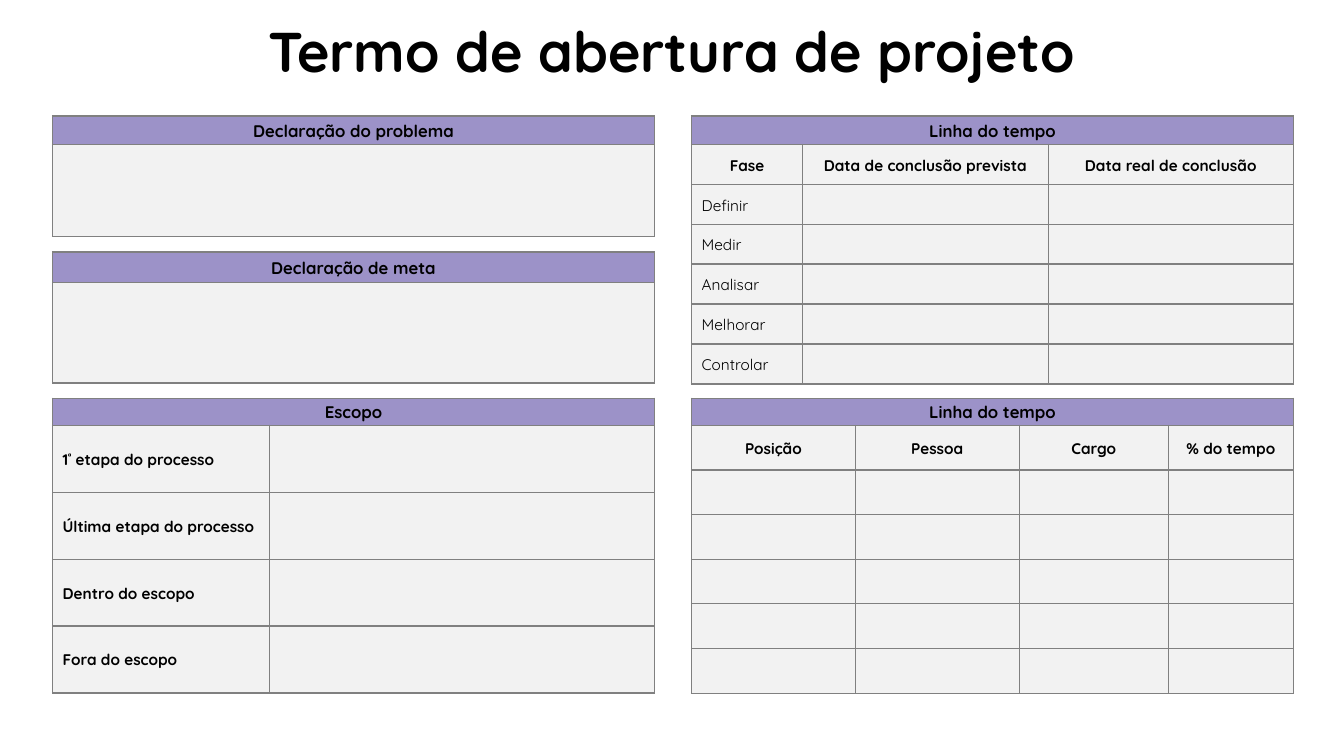
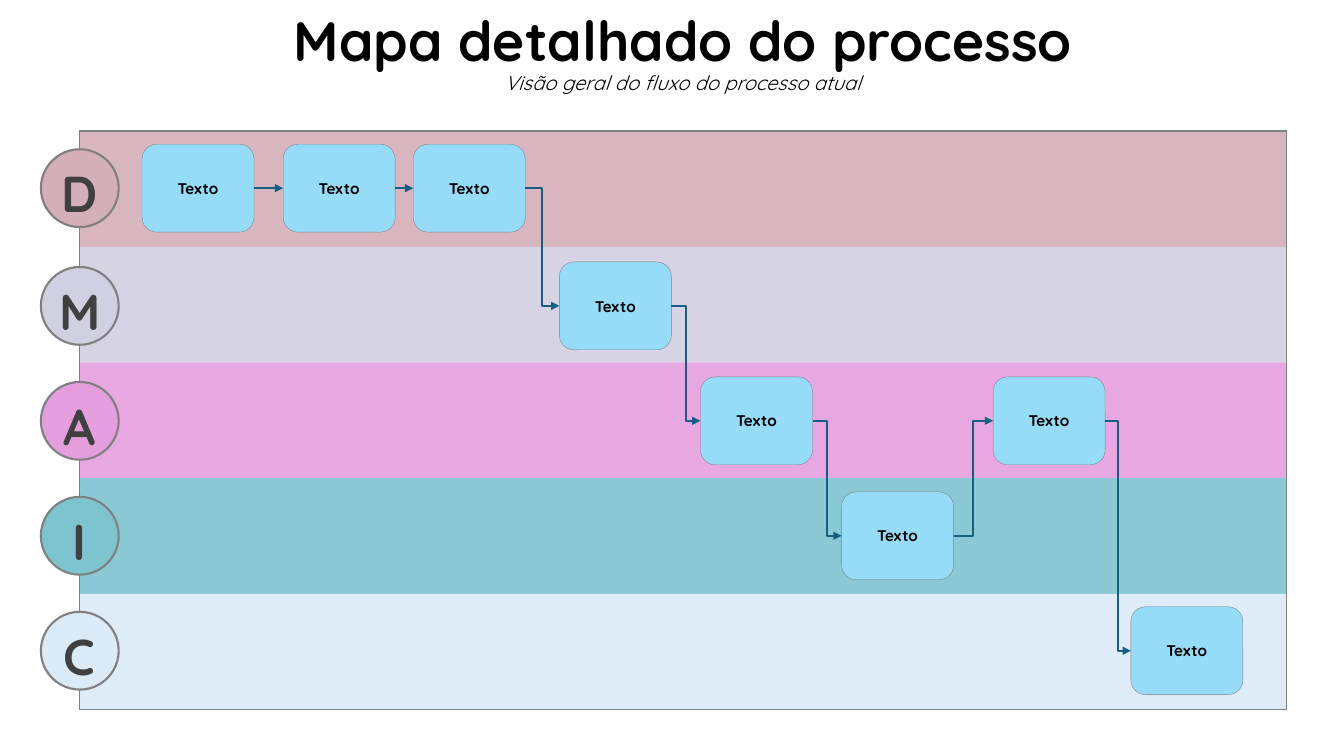
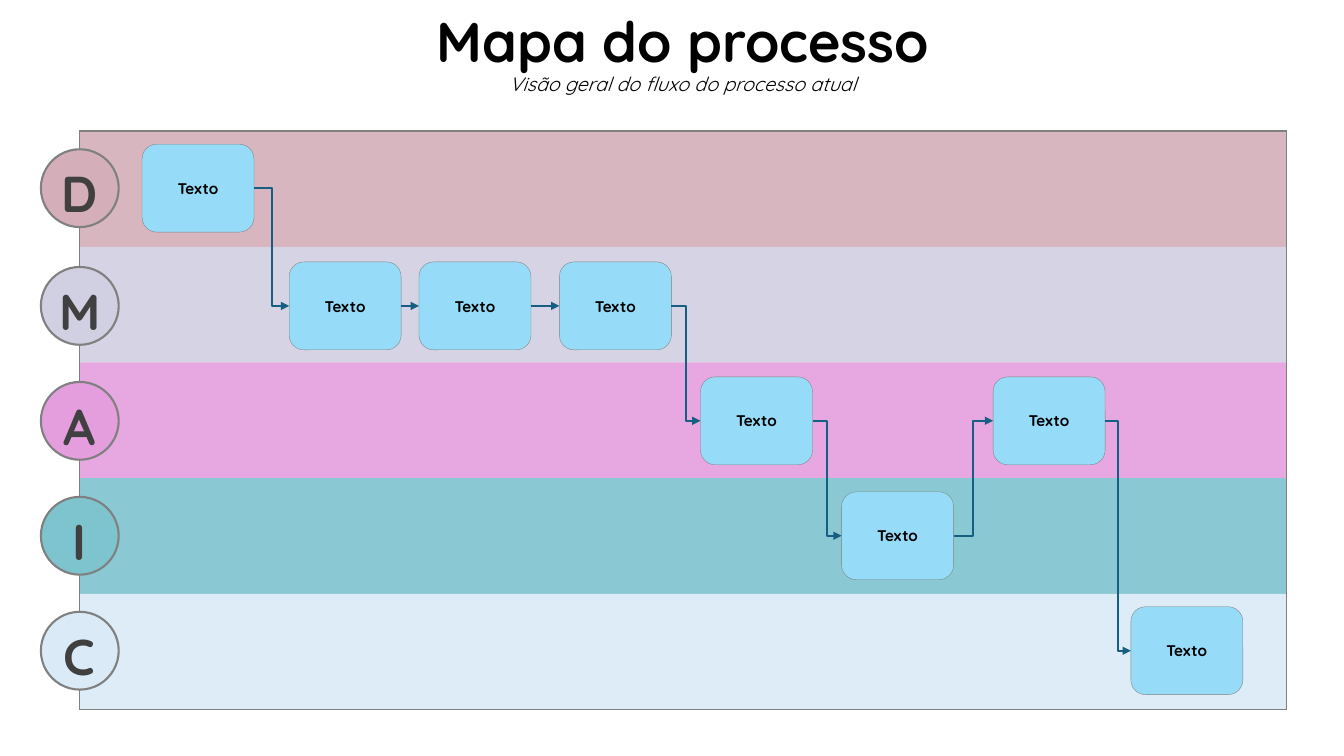
from itertools import pairwise

from pptx import Presentation
from pptx.dml.color import RGBColor
from pptx.enum.shapes import MSO_CONNECTOR, MSO_SHAPE
from pptx.enum.text import MSO_ANCHOR, PP_ALIGN
from pptx.oxml.ns import qn
from pptx.oxml.xmlchemy import OxmlElement
from pptx.util import Pt

FONT = "Quicksand"
BLACK, DARK, GRAY = "000000", "404040", "808080"
HEADER, BODY, CARD, ARROW = "9C92C8", "F2F2F2", "96DCF8", "156082"
PLAIN_TABLE = "{2D5ABB26-0587-4C30-8999-92F81FD0307C}"
LEFT, RIGHT, PANEL_WIDTH = 37.5, 494, 430
LANE_LEFT, LANE_TOP, LANE_WIDTH, LANE_HEIGHT = 57, 93.6, 861.8, 82.66
CARD_WIDTH, CARD_HEIGHT, BADGE = 80, 62.8, 55.6
LANES = {
    "D": ("D4AFB9", 134.4),
    "M": ("D1CFE2", 218.5),
    "A": ("E59EDD", 300.6),
    "I": ("7EC4CF", 382.7),
    "C": ("DAEAF6", 464.8),
}
SUBTITLE = "Visão geral do fluxo do processo atual"
SHARED_STEPS = [("M", 399.6), ("A", 500.4), ("I", 601.2), ("A", 709.4), ("C", 807.8)]


def rgb(value):
    return RGBColor.from_string(value)


def add_element(parent, tag, **attributes):
    element = OxmlElement(tag)
    for name, value in attributes.items():
        element.set(name, str(value))
    parent.append(element)
    return element


def add_text(paragraph, text, *, size=11, color=BLACK, bold=True, italic=False,
             align=PP_ALIGN.CENTER, spacing=1.07, superscript=False):
    paragraph.alignment = align
    paragraph.line_spacing = spacing
    run = paragraph.add_run()
    run.text = text
    font = run.font
    font.name, font.size, font.bold, font.italic = FONT, Pt(size), bold, italic
    font.color.rgb = rgb(color)
    if superscript:
        run._r.get_or_add_rPr().set("baseline", "30000")


def set_margins(item, horizontal, vertical):
    item.margin_left = item.margin_right = Pt(horizontal)
    item.margin_top = item.margin_bottom = Pt(vertical)


def style_cell(cell, fill, sides="LRTB", alpha=None):
    properties = cell._tc.get_or_add_tcPr()
    for side in sides:
        line = add_element(properties, f"a:ln{side}", w=Pt(1))
        add_element(add_element(line, "a:solidFill"), "a:srgbClr", val=GRAY)
    cell.fill.solid()
    cell.fill.fore_color.rgb = rgb(fill)
    if alpha:
        add_element(properties.find(qn("a:solidFill"))[0], "a:alpha", val=alpha * 1000)
    cell.vertical_anchor = MSO_ANCHOR.MIDDLE
    add_element(cell.text_frame.paragraphs[0]._p, "a:endParaRPr", sz=1100)


class Deck:
    def __init__(self):
        self.presentation = Presentation()
        self.presentation.slide_width = Pt(960)
        self.presentation.slide_height = Pt(540)
        self.slide = None

    def new_slide(self, title, left, width, size=40, subtitle=None, subtitle_size=14):
        self.slide = self.presentation.slides.add_slide(self.presentation.slide_layouts[6])
        frame = self.slide.shapes.add_textbox(Pt(left), Pt(0), Pt(width), Pt(77.8)).text_frame
        frame.word_wrap = True
        frame.vertical_anchor = MSO_ANCHOR.MIDDLE
        paragraph = frame.paragraphs[0]
        add_text(paragraph, title, size=size, spacing=0.9)
        if subtitle:
            paragraph.add_line_break()
            add_text(paragraph, subtitle, size=subtitle_size, bold=False, italic=True, spacing=0.9)

    def table(self, left, top, widths, heights):
        frame = self.slide.shapes.add_table(len(heights), len(widths), Pt(left), Pt(top),
                                            Pt(sum(widths)), Pt(sum(heights)))
        table = frame.table
        table.first_row = table.horz_banding = False
        table._tbl.tblPr.find(qn("a:tableStyleId")).text = PLAIN_TABLE
        for column, width in zip(table.columns, widths):
            column.width = Pt(width)
        for row, height in zip(table.rows, heights):
            row.height = Pt(height)
        return table

    def panel(self, title, left, top, widths, heights, rows=(), header=False, bold=True):
        table = self.table(left, top, widths, heights)
        for index, row in enumerate(table.rows):
            for cell in row.cells:
                style_cell(cell, BODY if index else HEADER)
        title_cell = table.cell(0, 0)
        if len(widths) > 1:
            title_cell.merge(table.cell(0, len(widths) - 1))
        set_margins(title_cell, 5.4, 0)
        add_text(title_cell.text_frame.paragraphs[0], title, size=12)
        for row_index, row in enumerate(rows, 1):
            centred = header and row_index == 1
            for column_index, text in enumerate(row):
                cell = table.cell(row_index, column_index)
                set_margins(cell, 7.2, 7.2)
                for part in filter(None, text.partition("ª")):
                    add_text(cell.text_frame.paragraphs[0], part, bold=bold or centred,
                             align=PP_ALIGN.CENTER if centred else PP_ALIGN.LEFT,
                             superscript=part == "ª")

    def shape(self, kind, left, middle, width, height, fill, line_width):
        shape = self.slide.shapes.add_shape(kind, Pt(left), Pt(middle - height / 2),
                                            Pt(width), Pt(height))
        shape.shadow.inherit = False
        shape.fill.solid()
        shape.fill.fore_color.rgb = rgb(fill)
        shape.line.color.rgb = rgb(GRAY)
        shape.line.width = Pt(line_width)
        shape.text_frame.vertical_anchor = MSO_ANCHOR.MIDDLE
        return shape

    def lanes(self):
        table = self.table(LANE_LEFT, LANE_TOP, [LANE_WIDTH], [LANE_HEIGHT] * len(LANES))
        edges = {0: "LRT", len(LANES) - 1: "LRB"}
        for index, (letter, (color, middle)) in enumerate(LANES.items()):
            style_cell(table.cell(index, 0), color, edges.get(index, "LR"), alpha=90)
            badge = self.shape(MSO_SHAPE.OVAL, LANE_LEFT - BADGE / 2, middle,
                               BADGE, BADGE, color, 1.5)
            set_margins(badge.text_frame, 0, 0)
            add_text(badge.text_frame.paragraphs[0], letter, size=36, color=DARK, spacing=1.15)

    def card(self, lane, left):
        card = self.shape(MSO_SHAPE.ROUNDED_RECTANGLE, left, LANES[lane][1],
                          CARD_WIDTH, CARD_HEIGHT, CARD, 0.25)
        add_text(card.text_frame.paragraphs[0], "Texto", spacing=1.0)
        return card

    def arrow(self, source, target):
        kind = MSO_CONNECTOR.STRAIGHT if source.top == target.top else MSO_CONNECTOR.ELBOW
        connector = self.slide.shapes.add_connector(kind, 0, 0, 0, 0)
        connector.begin_connect(source, 3)
        connector.end_connect(target, 1)
        connector.line.color.rgb = rgb(ARROW)
        connector.line.width = Pt(1.5)
        add_element(connector.line._get_or_add_ln(), "a:tailEnd", type="triangle")
        add_element(connector._element.spPr, "a:effectLst")

    def process(self, steps):
        self.lanes()
        cards = [self.card(lane, left) for lane, left in steps]
        for source, target in pairwise(cards):
            self.arrow(source, target)


def main():
    deck = Deck()

    deck.new_slide("Termo de abertura de projeto", 166.3, 627)
    deck.panel("Declaração do problema", LEFT, 82.8, [PANEL_WIDTH], [20.2, 66.2])
    deck.panel("Declaração de meta", LEFT, 180, [PANEL_WIDTH], [21.6, 72])
    deck.panel("Escopo", LEFT, 284.4, [155, 275], [19.4] + [47.8] * 4,
               [["1ª etapa do processo"], ["Última etapa do processo"],
                ["Dentro do escopo"], ["Fora do escopo"]])
    deck.panel("Linha do tempo", RIGHT, 82.8, [79.4, 175.3, 175.3], [20.2] + [28.1] * 6,
               [["Fase", "Data de conclusão prevista", "Data real de conclusão"],
                ["Definir"], ["Medir"], ["Analisar"], ["Melhorar"], ["Controlar"]],
               header=True, bold=False)
    deck.panel("Linha do tempo", RIGHT, 284.4, [117, 117, 106.6, 89.4], [19.4] + [31.9] * 6,
               [["Posição", "Pessoa", "Cargo", "% do tempo"]], header=True)

    deck.new_slide("Mapa detalhado do processo", 182.2, 611.2, 39.6, SUBTITLE, 14.4)
    deck.process([("D", 101.5), ("D", 202.3), ("D", 295.2)] + SHARED_STEPS)

    deck.new_slide("Mapa do processo", 280.8, 414, 40, SUBTITLE, 14)
    deck.process([("D", 101.5), ("M", 206.6), ("M", 299.3)] + SHARED_STEPS)

    deck.presentation.save("out.pptx")


if __name__ == "__main__":
    main()
